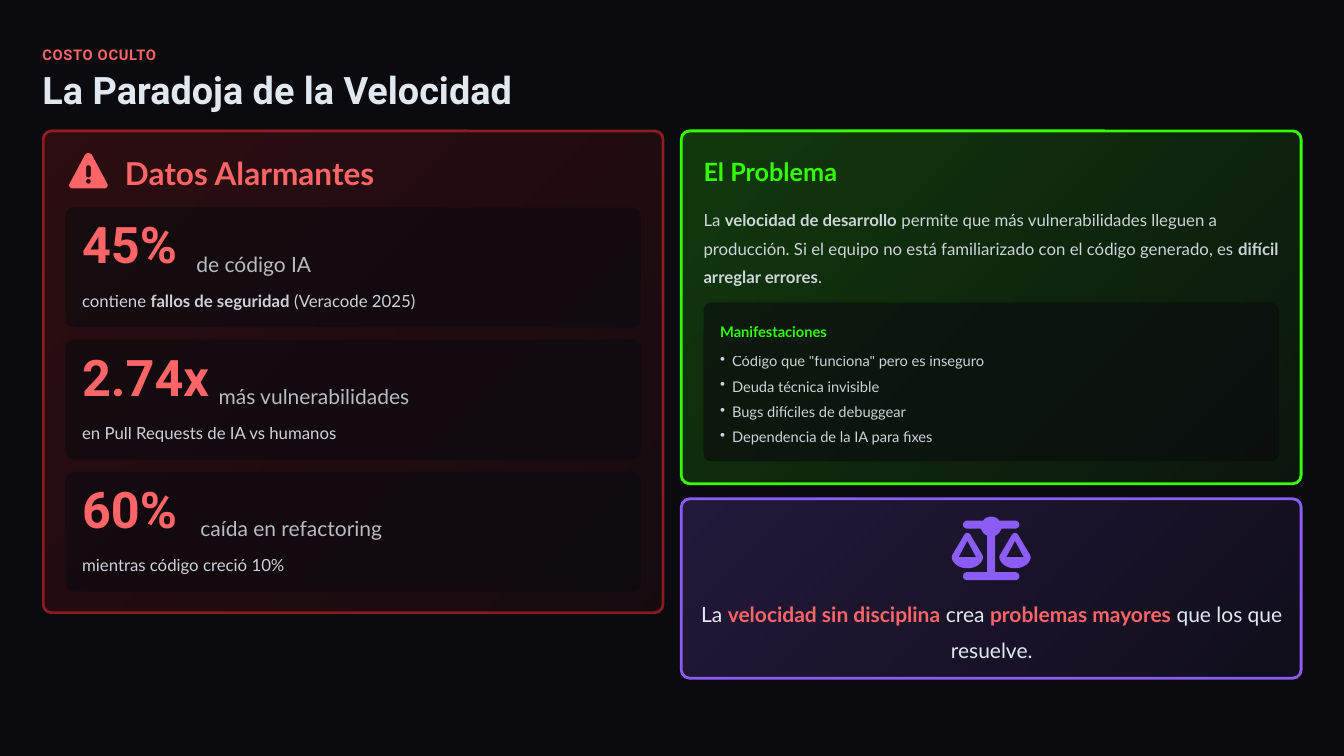
from lxml.etree import SubElement
from pptx import Presentation
from pptx.dml.color import RGBColor
from pptx.enum.shapes import MSO_SHAPE as SHAPE
from pptx.enum.text import MSO_ANCHOR as ANCHOR, PP_ALIGN as ALIGN
from pptx.oxml.ns import qn
from pptx.util import Cm, Pt

# Content; **...** marks emphasis
EYEBROW = "COSTO OCULTO"
TITLE = "La Paradoja de la Velocidad"
STATS_HEADING = "Datos Alarmantes"
# number, caption, caption left, detail
STATS = [
    ("45%", "de código IA", 4.95, "contiene **fallos de seguridad** (Veracode 2025)"),
    ("2.74x", "más vulnerabilidades", 5.51, "en Pull Requests de IA vs humanos"),
    ("60%", "caída en refactoring", 5.05, "mientras código creció 10%"),
]
PROBLEM_HEADING = "El Problema"
PROBLEM = ("La **velocidad de desarrollo** permite que más vulnerabilidades lleguen a "
           "producción. Si el equipo no está familiarizado con el código generado, es "
           "**difícil arreglar errores**.")
SIGNS_HEADING = "Manifestaciones"
SIGNS = [
    'Código que "funciona" pero es inseguro',
    "Deuda técnica invisible",
    "Bugs difíciles de debuggear",
    "Dependencia de la IA para fixes",
]
TAKEAWAY = ("La **velocidad sin disciplina** crea **problemas mayores** "
            "que los que resuelve.")

DARK, LIGHT, CORAL = "0A0A0F", "E2E8F0", "FF6467"
GREEN, VIOLET, RED, MAROON = "33FF00", "8B5CF6", "FB2C36", "82181A"

# Layout in cm
MARGIN, LEFT, RIGHT, TOP = 1.07, 1.09, 17.17, 3.3
PANEL_W, PAD, CARD_W, RADIUS = 15.62, 0.56, 14.5, 0.21
STAT_TOP, STAT_H, STAT_STEP = 5.23, 3.02, 3.33
INNER = 0.42

# Icons: (axis, right half of a symmetric outline); 2 values = line, 6 = curve
WARNING = [
    (0, [(0, 0), (.04, 0, .07, .02, .09, .05), (.47, .76),
         (.49, .79, .49, .83, .47, .85), (.45, .88, .42, .89, .39, .89)]),
    (0, [(0, .3), (.03, .3, .06, .33, .06, .36), (.06, .56),
         (.06, .59, .03, .61, 0, .61)]),
    (0, [(0, .65), (.08, .65, .08, .77, 0, .77)]),
]
STAND = [(0, 0), (.1, 0, .18, .05, .2, .1), (.61, .1), (.66, .1, .71, .15, .71, .2),
         (.71, .26, .66, .3, .61, .3), (.26, .3), (.23, .38, .18, .45, .1, .48),
         (.1, 1.4), (.61, 1.4), (.66, 1.4, .71, 1.44, .71, 1.5),
         (.71, 1.56, .66, 1.6, .61, 1.6)]
PAN = [(0, .41), (.03, .41, .06, .43, .08, .46), (.37, .95),
       (.39, .98, .4, 1.02, .39, 1.06), (.35, 1.2, .2, 1.3, 0, 1.3)]
PAN_HOLE = [(0, .61), (.22, 1.02)]
SCALES = [(0, STAND)] + [(x, half) for x in (-.6, .6) for half in (PAN, PAN_HOLE)]


def rgb(color):
    return RGBColor.from_string(color)


def set_alpha(element, *percents):
    """Give the colours inside an XML element their opacities, in order."""
    for clr, percent in zip(list(element.iter(qn("a:srgbClr"))), percents):
        SubElement(clr, qn("a:alpha")).set("val", str(percent * 1000))


def box(left, top, width, height):
    return Cm(left), Cm(top), Cm(width), Cm(height)


def rounded(left, top, width, height):
    sp = shapes.add_shape(SHAPE.ROUNDED_RECTANGLE, *box(left, top, width, height))
    sp.adjustments[0] = RADIUS / min(width, height)
    sp.shadow.inherit = False
    return sp


def panel(left, top, height, color, alphas, line, line_alpha=100):
    sp = rounded(left, top, PANEL_W, height)
    sp.fill.gradient()
    sp.fill.gradient_angle = 315
    for stop in sp.fill.gradient_stops:
        stop.color.rgb = rgb(color)
    set_alpha(sp._element.spPr, *alphas)
    sp.line.color.rgb = rgb(line)
    sp.line.width = Pt(2)
    set_alpha(sp.line._get_or_add_ln(), line_alpha)


def card(left, top, height):
    sp = rounded(left, top, CARD_W, height)
    sp.fill.solid()
    sp.fill.fore_color.rgb = rgb(DARK)
    set_alpha(sp._element.spPr, 60)
    sp.line.fill.background()


def flatten(half):
    """Turn lines and cubic curves into a list of points."""
    points = [half[0]]
    for seg in half[1:]:
        if len(seg) == 2:
            points.append(seg)
            continue
        knots = [points[-1], seg[:2], seg[2:4], seg[4:]]
        for t in (i / 8 for i in range(1, 9)):
            weights = ((1 - t) ** 3, 3 * t * (1 - t) ** 2, 3 * t * t * (1 - t), t ** 3)
            points.append(tuple(sum(w * k[axis] for w, k in zip(weights, knots))
                                for axis in (0, 1)))
    return points


def icon(center, top, contours, color):
    builder = None
    for axis, half in contours:
        right = flatten(half)
        outline = right + [(-x, y) for x, y in reversed(right)]
        points = [(Cm(center + axis + x), Cm(top + y)) for x, y in outline]
        if builder is None:
            builder = shapes.build_freeform(*points[0])
        else:
            builder.move_to(*points[0])
        builder.add_line_segments(points[1:], close=True)
    sp = builder.convert_to_shape()
    sp.shadow.inherit = False
    sp.fill.solid()
    sp.fill.fore_color.rgb = rgb(color)
    sp.line.fill.background()


def frame(sp):
    tf = sp.text_frame
    tf.margin_left = tf.margin_right = tf.margin_top = tf.margin_bottom = 0
    tf.word_wrap = True
    tf.vertical_anchor = ANCHOR.MIDDLE
    return tf


def write(p, content, size, color, spacing, font="Lato", bold=False, alpha=100,
          accent=None, align=ALIGN.LEFT):
    p.line_spacing = spacing
    p.alignment = align
    for i, piece in enumerate(content.split("**")):
        strong = i % 2 == 1
        r = p.add_run()
        r.text = piece
        r.font.name, r.font.size, r.font.bold = font, Pt(size), bold or strong
        r.font.color.rgb = rgb(accent if accent and strong else color)
        if alpha < 100:
            set_alpha(r._r, alpha)


def text(place, *args, **style):
    p = frame(shapes.add_textbox(*box(*place))).paragraphs[0]
    write(p, *args, **style)
    return p


def bullet(p):
    pPr = p._p.get_or_add_pPr()
    pPr.set("marL", str(Cm(0.3)))
    pPr.set("indent", str(-Cm(0.3)))
    SubElement(pPr, qn("a:buChar")).set("char", "•")


prs = Presentation()
prs.slide_width, prs.slide_height = Cm(33.87), Cm(19.05)
s = prs.slides.add_slide(prs.slide_layouts[5])
s.background.fill.solid()
s.background.fill.fore_color.rgb = rgb(DARK)
shapes = s.shapes

p = text((MARGIN, 1.07, 31.93, 0.53), EYEBROW, 10.5, CORAL, 1.2, font="Roboto", bold=True)
p.runs[0]._r.get_or_add_rPr().set("spc", "50")
title = shapes.title
title.left, title.top, title.width, title.height = box(MARGIN, 1.8, 32.23, 1.07)
write(frame(title).paragraphs[0], TITLE, 27, LIGHT, 0.9, font="Roboto", bold=True)

# Alarming figures
panel(LEFT, TOP, 12.14, MAROON, (30, 10), RED, 50)
icon(2.23, 3.86, WARNING, CORAL)
text((3.15, 3.86, 6.88, 0.97), STATS_HEADING, 22.5, CORAL, 1.0, bold=True)
for i, (number, caption, caption_left, detail) in enumerate(STATS):
    left, top = LEFT + PAD, STAT_TOP + i * STAT_STEP
    card(left, top, STAT_H)
    text((left + INNER, top + 0.42, 3.76, 1.27), number, 36, CORAL, 0.8,
         font="Roboto", bold=True)
    text((caption_left, top + 0.99, 5.5, 0.74), caption, 15, LIGHT, 1.2, alpha=80)
    text((left + INNER, top + 1.95, 13.87, 0.64), detail, 12, LIGHT, 1.3, alpha=90)

# The problem
left = RIGHT + PAD
panel(RIGHT, TOP, 8.89, GREEN, (20, 5), GREEN)
text((left, 3.86, 14.81, 0.84), PROBLEM_HEADING, 18, GREEN, 1.1, bold=True)
text((left, 5.13, 14.71, 2.06), PROBLEM, 12, LIGHT, 1.4, alpha=90)
card(left, 7.62, 4.01)
text((left + INNER, 8.05, 13.84, 0.53), SIGNS_HEADING, 10.5, GREEN, 1.2, bold=True)
tf = frame(shapes.add_textbox(*box(left + INNER, 8.79, 13.84, 2.44)))
for i, sign in enumerate(SIGNS):
    p = tf.add_paragraph() if i else tf.paragraphs[0]
    bullet(p)
    write(p, sign, 10.5, LIGHT, 1.2, alpha=90)
    if i:
        p.space_before = Pt(3)

# Takeaway
panel(RIGHT, 12.57, 4.52, VIOLET, (20, 5), VIOLET)
icon(RIGHT + PANEL_W / 2, 13.02, SCALES, VIOLET)
text((17.5, 14.94, 14.99, 1.73), TAKEAWAY, 15, LIGHT, 1.4, accent=CORAL,
     align=ALIGN.CENTER)

prs.save("out.pptx")
